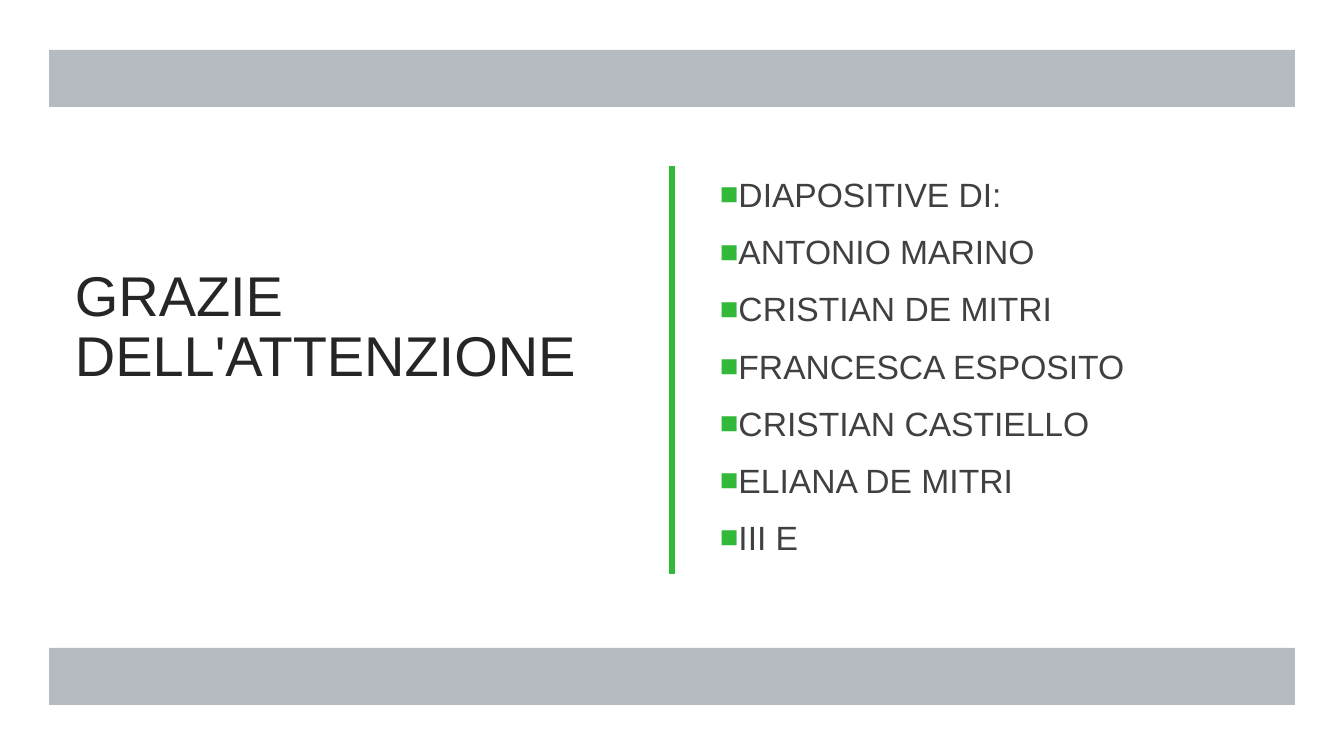
from lxml.etree import SubElement
from pptx import Presentation
from pptx.dml.color import RGBColor
from pptx.enum.shapes import MSO_SHAPE
from pptx.enum.text import MSO_ANCHOR, PP_ALIGN
from pptx.oxml.ns import qn
from pptx.util import Emu, Pt

EMU_PER_PX = 914400 / 100.8
SLIDE_WIDTH, SLIDE_HEIGHT = 1344, 756
FONT = "Arial"
COLORS = {"band": "969FA7", "accent": "32B93A", "title": "262626", "body": "404040"}
CREDITS = [
    "DIAPOSITIVE DI:",
    "ANTONIO MARINO\u00a0",
    "CRISTIAN DE MITRI",
    "FRANCESCA ESPOSITO",
    "CRISTIAN CASTIELLO",
    "ELIANA DE MITRI\u00a0",
    "III E",
]


def px(length):
    """Convert pixels to EMU."""
    return Emu(round(length * EMU_PER_PX))


def add_bar(slide, box, color, opacity=100):
    """Draw a plain filled rectangle in the given box."""
    bar = slide.shapes.add_shape(MSO_SHAPE.RECTANGLE, *map(px, box))
    bar.shadow.inherit = False
    bar.fill.solid()
    bar.fill.fore_color.rgb = RGBColor.from_string(COLORS[color])
    bar.line.fill.background()
    if opacity < 100:
        fill_color = bar.fill._xPr.find(qn("a:solidFill"))[0]
        SubElement(fill_color, qn("a:alpha"), val=str(opacity * 1000))


def add_text_frame(slide, box):
    """Add a wrapping, top-anchored text box and return its frame."""
    text_frame = slide.shapes.add_textbox(*map(px, box)).text_frame
    text_frame.word_wrap = True
    text_frame.vertical_anchor = MSO_ANCHOR.TOP
    return text_frame


def format_runs(paragraph, size, color):
    """Set the font of every run in a paragraph."""
    for run in paragraph.runs:
        run.font.name = FONT
        run.font.size = Pt(size)
        run.font.color.rgb = RGBColor.from_string(COLORS[color])


def add_bullet(paragraph):
    """Give a paragraph a green square bullet."""
    properties = paragraph._p.get_or_add_pPr()
    properties.set("marL", "0")
    properties.set("indent", "0")
    bullet_color = SubElement(properties, qn("a:buClr"))
    SubElement(bullet_color, qn("a:srgbClr"), val=COLORS["accent"])
    SubElement(properties, qn("a:buSzPct"), val="92000")
    SubElement(properties, qn("a:buFont"), typeface=FONT)
    SubElement(properties, qn("a:buChar"), char="■")


def add_title(slide, box):
    """Write the closing thanks."""
    paragraph = add_text_frame(slide, box).paragraphs[0]
    paragraph.text = "GRAZIE DELL'ATTENZIONE"
    paragraph.alignment = PP_ALIGN.JUSTIFY
    paragraph.line_spacing = 0.9
    format_runs(paragraph, 40, "title")


def add_credits(slide, box):
    """List the authors as bullets."""
    text_frame = add_text_frame(slide, box)
    text_frame.text = "\n".join(CREDITS)
    for index, paragraph in enumerate(text_frame.paragraphs):
        paragraph.space_before = Pt(6 if index else 0)
        paragraph.space_after = Pt(6)
        add_bullet(paragraph)
        format_runs(paragraph, 24, "body")


def build_closing_slide(slide, box):
    """Place the bands, title, divider and credits within the box."""
    left, top, width, height = box
    margin, band_height = 49, 57
    band_width = width - 2 * margin
    for band_top in (top + 50, top + height - 51 - band_height):
        add_bar(slide, (left + margin, band_top, band_width, band_height), "band", 70)
    add_title(slide, (left + 65, top + 263, 564, 336))
    add_bar(slide, (left + width // 2 - 3, top + 166, 6, 408), "accent")
    add_credits(slide, (left + 710, top + 169, 531, 430))


def main():
    """Build and save the presentation."""
    presentation = Presentation()
    presentation.slide_width = px(SLIDE_WIDTH)
    presentation.slide_height = px(SLIDE_HEIGHT)
    slide = presentation.slides.add_slide(presentation.slide_layouts[6])
    build_closing_slide(slide, (0, 0, SLIDE_WIDTH, SLIDE_HEIGHT))
    presentation.save("out.pptx")


if __name__ == "__main__":
    main()
